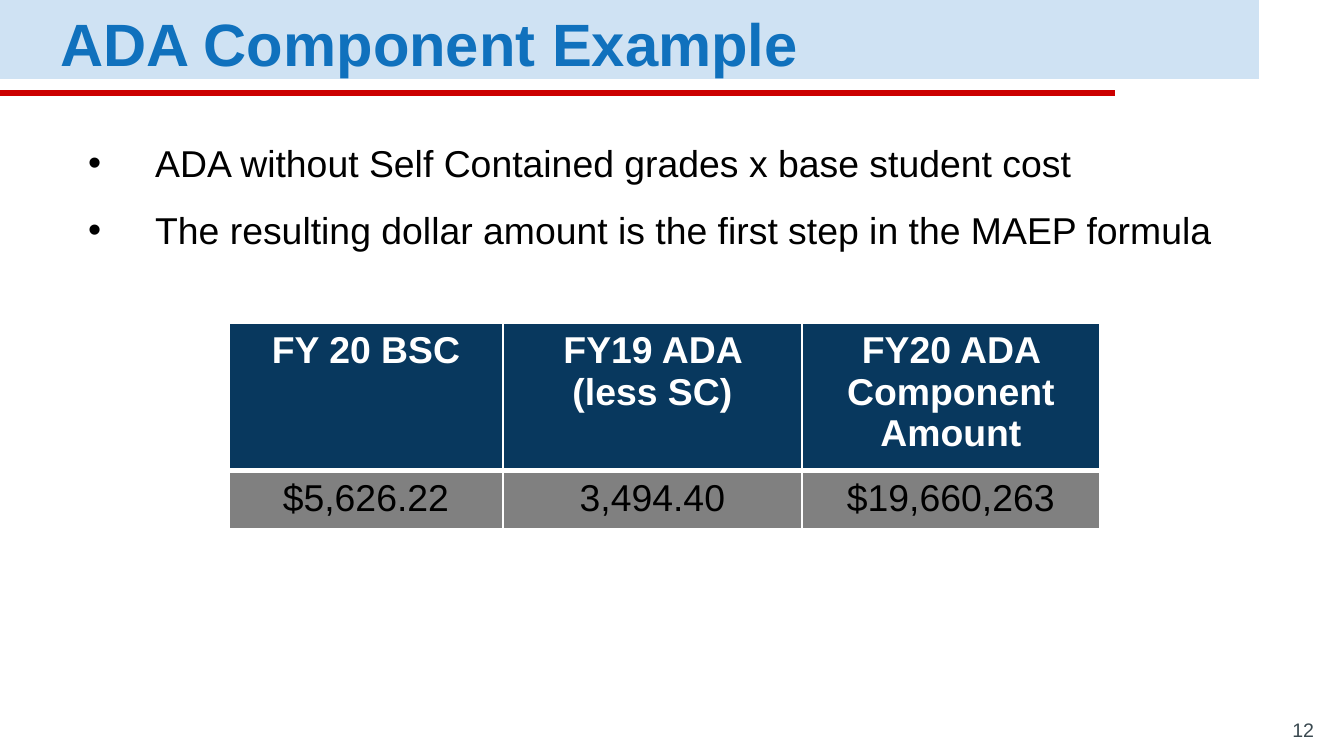
from lxml import etree
from pptx import Presentation
from pptx.dml.color import RGBColor
from pptx.enum.shapes import MSO_SHAPE
from pptx.enum.text import MSO_ANCHOR, PP_ALIGN
from pptx.oxml import parse_xml
from pptx.oxml.ns import nsdecls, qn
from pptx.util import Pt

RECT = MSO_SHAPE.RECTANGLE
MIDDLE, BOTTOM = MSO_ANCHOR.MIDDLE, MSO_ANCHOR.BOTTOM
LEFT, CENTER, RIGHT = PP_ALIGN.LEFT, PP_ALIGN.CENTER, PP_ALIGN.RIGHT

WHITE = RGBColor(0xFF, 0xFF, 0xFF)
BLACK = RGBColor(0x00, 0x00, 0x00)
PALE_BLUE = RGBColor(0xCF, 0xE2, 0xF3)
RED = RGBColor(0xCC, 0x00, 0x00)
BLUE = RGBColor(0x10, 0x71, 0xBD)
NAVY = RGBColor(0x08, 0x38, 0x5E)
GRAY = RGBColor(0x80, 0x80, 0x80)
SLATE = RGBColor(0x3A, 0x49, 0x50)

SCALE = 914400 / 134.4


def px(n):
    return round(n * SCALE)


def add_run(p, text, size, color, bold=False, align=LEFT):
    p.alignment = align
    r = p.add_run()
    r.text = text
    r.font.name = "Arial"
    r.font.size = Pt(size)
    r.font.bold = bold
    r.font.color.rgb = color


prs = Presentation()
prs.slide_width, prs.slide_height = px(1344), px(756)
s = prs.slides.add_slide(prs.slide_layouts[5])

for y, w, h, color in [(0, 1259, 79, PALE_BLUE), (90, 1115, 6, RED)]:
    sp = s.shapes.add_shape(RECT, 0, px(y), px(w), px(h))
    sp.shadow.inherit = False
    sp.fill.solid()
    sp.fill.fore_color.rgb = color
    sp.line.fill.background()

title = s.shapes.title
s.shapes._spTree.append(title._element)
title.left, title.top, title.width, title.height = px(47), px(4), px(1213), px(66)
number = s.shapes.add_textbox(px(1246), px(718), px(81), px(35))

for sp, anchor in [(title, MIDDLE), (number, BOTTOM)]:
    tf = sp.text_frame
    tf.word_wrap = True
    tf.vertical_anchor = anchor
    tf.margin_left = tf.margin_right = tf.margin_top = tf.margin_bottom = px(13)

p = title.text_frame.paragraphs[0]
p.line_spacing = 1.15
p.space_before = Pt(0)
p.space_after = Pt(16)
add_run(p, "ADA Component Example", 32, BLUE, True)
add_run(number.text_frame.paragraphs[0], "12", 10.5, SLATE, align=RIGHT)

body = s.shapes.add_textbox(px(75), px(134), px(1184), px(126))
tf = body.text_frame
tf.word_wrap = True
bullets = ["ADA without Self Contained grades x base student cost",
           "The resulting dollar amount is the first step in the MAEP formula"]
for i, text in enumerate(bullets):
    p = tf.add_paragraph() if i else tf.paragraphs[0]
    pPr = p._p.get_or_add_pPr()
    pPr.set("marL", str(px(67)))
    pPr.set("indent", str(-px(67)))
    etree.SubElement(pPr, qn("a:buFont"), typeface="Arial")
    etree.SubElement(pPr, qn("a:buChar"), char="•")
    p.space_before = Pt(11.5 if i else 0)
    add_run(p, text, 20, BLACK)

rows = [["FY 20 BSC", "FY19 ADA (less SC)", "FY20 ADA Component Amount"],
        ["$5,626.22", "3,494.40", "$19,660,263"]]
col_widths = [274, 299, 298]
row_heights = [148, 58]
styles = [(NAVY, WHITE, True, {"L": 1, "R": 1, "T": 1, "B": 3}),
          (GRAY, BLACK, False, {"L": 1, "R": 1, "T": 3, "B": 1})]
frame = s.shapes.add_table(2, 3, px(229), px(323), px(sum(col_widths)), px(sum(row_heights)))
table = frame.table
for col, w in zip(table.columns, col_widths):
    col.width = px(w)
for i, (values, h, (fill, color, bold, borders)) in enumerate(zip(rows, row_heights, styles)):
    table.rows[i].height = px(h)
    for j, text in enumerate(values):
        cell = table.cell(i, j)
        cell.fill.solid()
        cell.fill.fore_color.rgb = fill
        add_run(cell.text_frame.paragraphs[0], text, 20, color, bold, CENTER)
        tcPr = cell._tc.get_or_add_tcPr()
        for k, (side, width) in enumerate(borders.items()):
            tcPr.insert(k, parse_xml(
                f'<a:ln{side} {nsdecls("a")} w="{Pt(width)}"><a:solidFill>'
                f'<a:srgbClr val="{WHITE}"/></a:solidFill></a:ln{side}>'))

prs.save("out.pptx")
